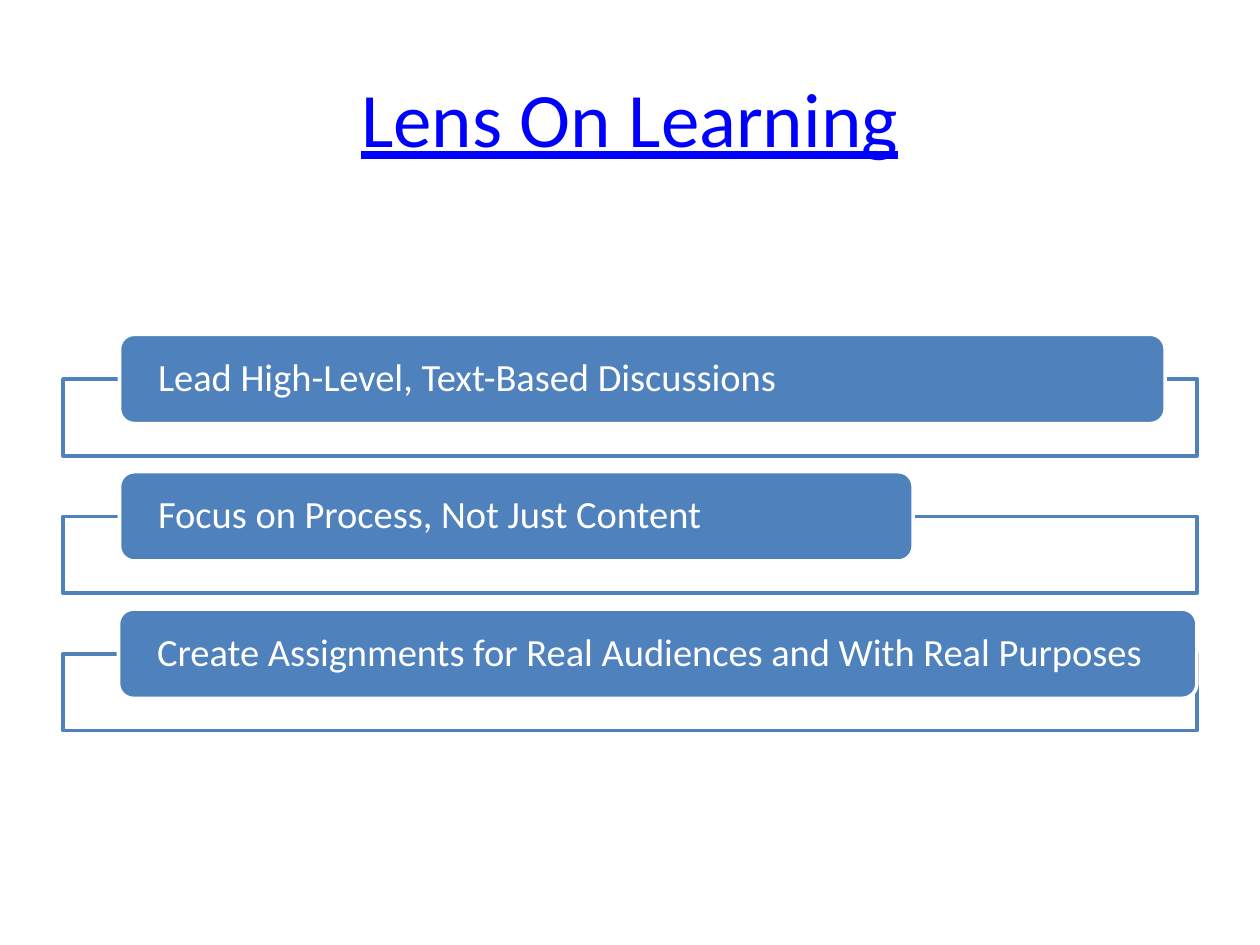
"""Build a slide with a title and three framed classroom strategies."""
import dataclasses

import pptx
import pptx.dml.color
import pptx.enum.shapes
import pptx.enum.text
import pptx.oxml.ns
import pptx.shapes.autoshape
import pptx.slide
import pptx.text.text
import pptx.util
from lxml import etree
from pptx.util import Cm

COLORS = {"accent": "4F81BD", "paper": "FFFFFF", "title": "0000FF"}
SHAPES = pptx.enum.shapes.MSO_SHAPE
ANCHOR = pptx.enum.text.MSO_ANCHOR
ALIGN = pptx.enum.text.PP_ALIGN

MARGIN, CONTENT_WIDTH = 1.27, 22.86
FIRST_TOP, PITCH = 6.74, 2.77
LABEL_HEIGHT, FRAME_HEIGHT = 1.8, 1.55


@dataclasses.dataclass
class Strategy:
    text: str
    left: float
    width: float


STRATEGIES = [
    Strategy("Lead High-Level, Text-Based Discussions", 2.41, 21.08),
    Strategy("Focus on Process, Not Just Content", 2.41, 16),
    Strategy("Create Assignments for Real Audiences and With Real Purposes", 2.39, 21.74),
]


def color(name: str) -> pptx.dml.color.RGBColor:
    return pptx.dml.color.RGBColor.from_string(COLORS[name])


def apply(target: object, values: dict) -> None:
    for name, value in values.items():
        setattr(target, name, value)


def write(frame: pptx.text.text.TextFrame, text: str, ink: str, frame_format: dict,
          para_format: dict, font_format: dict) -> None:
    apply(frame, {"word_wrap": True, "vertical_anchor": ANCHOR.MIDDLE, **frame_format})
    para = frame.paragraphs[0]
    apply(para, para_format)
    span = para.add_run()
    span.text = text
    apply(span.font, {"name": "Calibri", **font_format})
    span.font.color.rgb = color(ink)


def add_box(page: pptx.slide.Slide, kind: pptx.enum.shapes.MSO_SHAPE, left: float, top: float,
            width: float, height: float, fill: str, line: str) -> pptx.shapes.autoshape.Shape:
    box = page.shapes.add_shape(kind, Cm(left), Cm(top), Cm(width), Cm(height))
    box.shadow.inherit = False
    box.fill.solid()
    box.fill.fore_color.rgb = color(fill)
    box.line.color.rgb = color(line)
    box.line.width = pptx.util.Pt(2)
    return box


def set_opacity(box: pptx.shapes.autoshape.Shape, percent: int) -> None:
    tint = box.fill._xPr.find(".//" + pptx.oxml.ns.qn("a:srgbClr"))
    etree.SubElement(tint, pptx.oxml.ns.qn("a:alpha"), val=str(percent * 1000))


def add_strategy(page: pptx.slide.Slide, strategy: Strategy, top: float) -> None:
    frame = add_box(page, SHAPES.RECTANGLE, MARGIN, top + LABEL_HEIGHT / 2,
                    CONTENT_WIDTH, FRAME_HEIGHT, "paper", "accent")
    set_opacity(frame, 90)
    label = add_box(page, SHAPES.ROUNDED_RECTANGLE, strategy.left, top,
                    strategy.width, LABEL_HEIGHT, "accent", "paper")
    write(label.text_frame, strategy.text, "paper",
          {"margin_left": Cm(0.69), "margin_right": Cm(0.69), "margin_top": 0, "margin_bottom": 0},
          {"alignment": ALIGN.LEFT, "line_spacing": 0.9},
          {"size": pptx.util.Pt(22)})


def main() -> None:
    deck = pptx.Presentation()
    apply(deck, {"slide_width": Cm(25.4), "slide_height": Cm(19.05)})
    page = deck.slides.add_slide(deck.slide_layouts.get_by_name("Title Only"))
    title = page.shapes.title
    apply(title, {"left": Cm(MARGIN), "top": Cm(0.76),
                  "width": Cm(CONTENT_WIDTH), "height": Cm(3.18)})
    write(title.text_frame, "Lens On Learning", "title", {}, {"alignment": ALIGN.CENTER},
          {"size": pptx.util.Pt(44), "underline": True})
    for index, strategy in enumerate(STRATEGIES):
        add_strategy(page, strategy, FIRST_TOP + index * PITCH)
    deck.save("out.pptx")


if __name__ == "__main__":
    main()
